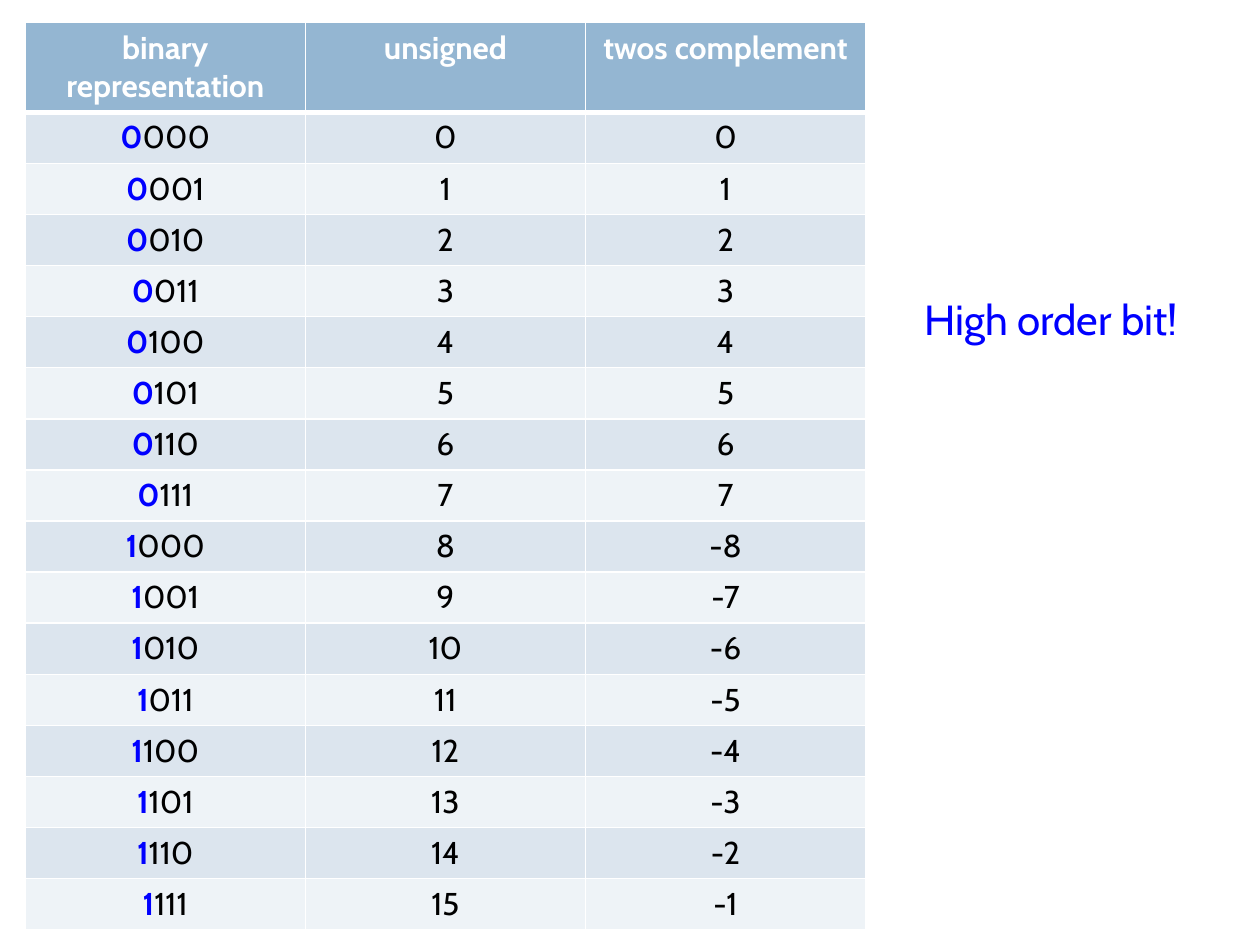
from dataclasses import dataclass

from pptx import Presentation
from pptx.dml.color import RGBColor as RGB
from pptx.enum.text import MSO_AUTO_SIZE as AutoSize, PP_ALIGN as Align
from pptx.oxml import parse_xml
from pptx.oxml.ns import nsdecls
from pptx.util import Inches, Pt

# Content
BITS = 4
HEADINGS = ("binary representation", "unsigned", "twos complement")
CALLOUT = "High order bit!"


@dataclass(frozen=True)
class Theme:
    font: str = "Cabin"
    table_size: int = 18
    callout_size: int = 24
    header: str = "94B6D2"
    bands: tuple = ("DCE5EE", "EEF3F7")
    white: str = "FFFFFF"
    ink: str = "000000"
    high_bit: str = "0000FF"
    rule: int = 1
    header_rule: int = 3


THEME = Theme()

# Layout, in inches
SLIDE_W, SLIDE_H = 10, 7.5
LEFT, TOP, TABLE_W, TABLE_H = 0.2, 0.18, 6.67, 7.19
HEADER_H = 0.7
CALLOUT_BOX = (7.24, 2.28, 2.75, 0.5)


def add_run(paragraph, text, color, size=THEME.table_size, bold=False):
    run = paragraph.add_run()
    run.text = text
    for name, value in dict(name=THEME.font, size=Pt(size), bold=bold).items():
        setattr(run.font, name, value)
    run.font.color.rgb = RGB.from_string(color)


def format_cell(cell, runs, fill, bottom_rule=THEME.rule):
    """Fill one cell with (text, color, bold) runs between white rules."""
    properties = cell._tc.get_or_add_tcPr()
    for side in "LRTB":
        width = Pt(bottom_rule if side == "B" else THEME.rule)
        properties.append(parse_xml(
            f'<a:ln{side} {nsdecls("a")} w="{width}"><a:solidFill>'
            f'<a:srgbClr val="{THEME.white}"/></a:solidFill></a:ln{side}>'))
    cell.fill.solid()
    cell.fill.fore_color.rgb = RGB.from_string(fill)
    paragraph = cell.text_frame.paragraphs[0]
    paragraph.alignment = Align.CENTER
    for text, color, bold in runs:
        add_run(paragraph, text, color, bold=bold)


def number_row(number):
    """Runs for the bit pattern and its two readings."""
    pattern = f"{number:0{BITS}b}"
    signed = number - 2 ** BITS if pattern[0] == "1" else number
    return (
        [(pattern[0], THEME.high_bit, True), (pattern[1:], THEME.ink, False)],
        [(str(number), THEME.ink, False)],
        [(str(signed), THEME.ink, False)],
    )


def add_number_table(slide):
    count = 2 ** BITS
    box = map(Inches, (LEFT, TOP, TABLE_W, TABLE_H))
    table = slide.shapes.add_table(count + 1, len(HEADINGS), *box).table
    for column in table.columns:
        column.width = Inches(TABLE_W / len(HEADINGS))
    for index, row in enumerate(table.rows):
        row.height = Inches((TABLE_H - HEADER_H) / count if index else HEADER_H)

    # Header
    for cell, heading in zip(table.rows[0].cells, HEADINGS):
        format_cell(cell, [(heading, THEME.white, True)], THEME.header,
                    THEME.header_rule)

    # One banded row for each number
    for number in range(count):
        band = THEME.bands[number % len(THEME.bands)]
        for cell, runs in zip(table.rows[number + 1].cells, number_row(number)):
            format_cell(cell, runs, band)


def add_callout(slide):
    frame = slide.shapes.add_textbox(*map(Inches, CALLOUT_BOX)).text_frame
    for name, value in dict(word_wrap=True,
                            auto_size=AutoSize.SHAPE_TO_FIT_TEXT).items():
        setattr(frame, name, value)
    add_run(frame.paragraphs[0], CALLOUT, THEME.high_bit, THEME.callout_size)


def main():
    deck = Presentation()
    deck.slide_width, deck.slide_height = Inches(SLIDE_W), Inches(SLIDE_H)
    slide = deck.slides.add_slide(deck.slide_layouts.get_by_name("Blank"))
    add_number_table(slide)
    add_callout(slide)
    deck.save("out.pptx")


if __name__ == "__main__":
    main()
